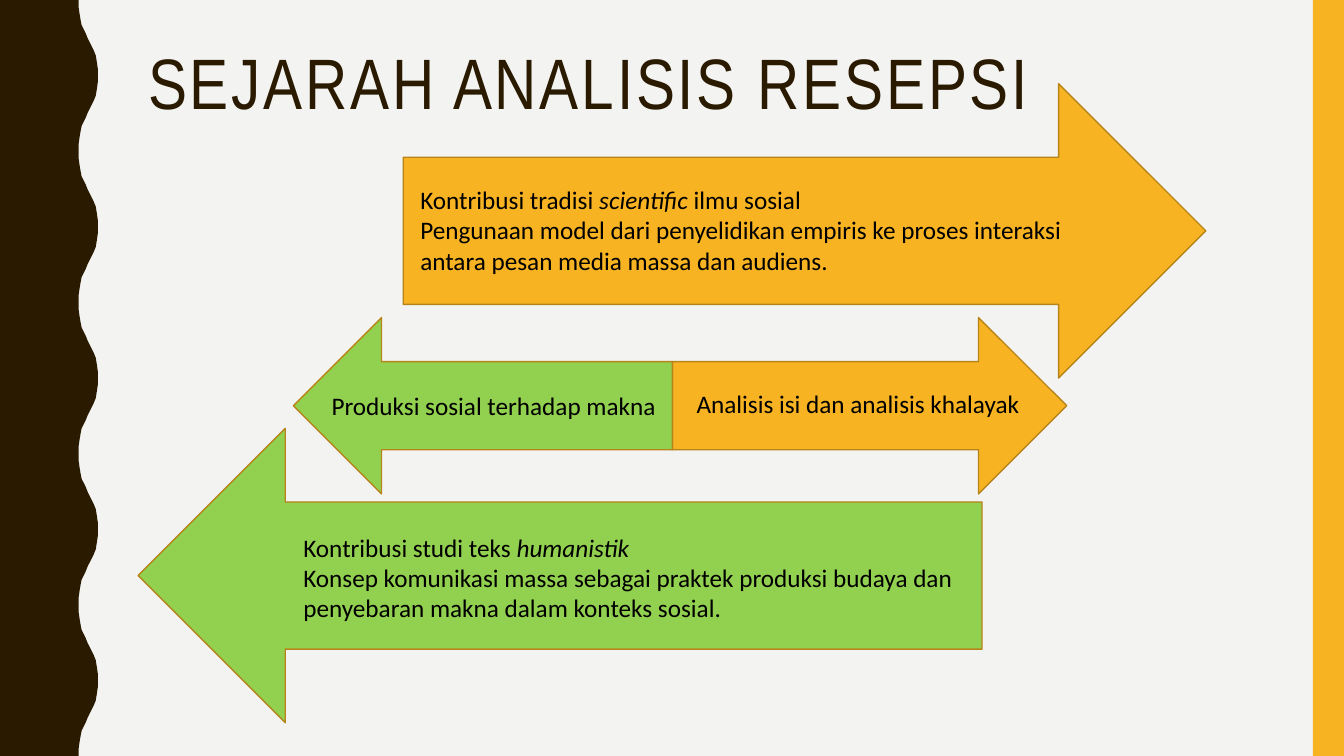
from pptx import Presentation
from pptx.dml.color import RGBColor
from pptx.enum.shapes import MSO_SHAPE as SHAPE
from pptx.enum.text import MSO_ANCHOR as ANCHOR, MSO_AUTO_SIZE as AUTO, PP_ALIGN as ALIGN
from pptx.util import Pt

PX = 9144
BROWN = RGBColor(0x2A, 0x1A, 0x00)
AMBER = RGBColor(0xF8, 0xB3, 0x23)
GREEN = RGBColor(0x92, 0xD0, 0x50)
EDGE = RGBColor(0xB7, 0x84, 0x1A)
PALE = RGBColor(0xF3, 0xF3, 0xF2)
BLACK = RGBColor(0, 0, 0)


def paint(sp, fill, line=None):
    sp.shadow.inherit = False
    sp.fill.solid()
    sp.fill.fore_color.rgb = fill
    if line is None:
        sp.line.fill.background()
    else:
        sp.line.color.rgb = line
        sp.line.width = Pt(1)


def add_run(p, text, color, **font):
    r = p.add_run()
    r.text = text
    r.font.color.rgb = color
    for name, value in font.items():
        setattr(r.font, name, value)
    return r


prs = Presentation()
prs.slide_width, prs.slide_height = 1333 * PX, 750 * PX
s = prs.slides.add_slide(prs.slide_layouts[5])
s.background.fill.solid()
s.background.fill.fore_color.rgb = PALE

title = s.shapes.title
title.left, title.top, title.width, title.height = [v * PX for v in (137, 42, 1113, 163)]
tf = title.text_frame
for name, value in {"word_wrap": True, "auto_size": AUTO.NONE, "vertical_anchor": ANCHOR.TOP}.items():
    setattr(tf, name, value)
p = tf.paragraphs[0]
p.alignment = ALIGN.LEFT
p.line_spacing = 0.9
r = add_run(p, "SEJARAH ANALISIS RESEPSI", BROWN, name="Arial Narrow", size=Pt(51))
r.font._element.set("spc", "200")

rise = [(78, 0), (78, 7), (79, 14), (80, 20), (81, 25), (83, 29), (85, 33), (87, 38),
        (89, 42), (91, 46), (93, 50), (95, 55), (96, 61), (97, 68), (97, 75)]
wave = rise + [(x, 150 - y) for x, y in reversed(rise[:-1])]
edge = [(x, y + 150 * i) for i in range(5) for x, y in wave]
builder = s.shapes.build_freeform(0, 0, scale=PX)
builder.add_line_segments(edge + [(0, 750)], close=True)
paint(builder.convert_to_shape(), BROWN)

bar = s.shapes.add_shape(SHAPE.RECTANGLE, 1302 * PX, 0, 31 * PX, 750 * PX)
paint(bar, AMBER)

arrows = [
    (SHAPE.RIGHT_ARROW, AMBER, (400, 83, 796, 292)),
    (SHAPE.LEFT_ARROW, GREEN, (137, 425, 837, 292)),
    (SHAPE.RIGHT_ARROW, AMBER, (667, 315, 391, 175)),
    (SHAPE.LEFT_ARROW, GREEN, (291, 315, 376, 175)),
]
for kind, fill, box in arrows:
    paint(s.shapes.add_shape(kind, *[v * PX for v in box]), fill, EDGE)

captions = [
    ((407, 178, 691, 101), [
        [("Kontribusi tradisi ", False), ("scientific ", True), ("ilmu sosial", False)],
        [("Pengunaan model dari penyelidikan empiris ke proses interaksi "
          "antara pesan media massa dan audiens.", False)]]),
    ((291, 523, 682, 101), [
        [("Kontribusi studi teks ", False), ("humanistik", True)],
        [("Konsep komunikasi massa sebagai praktek produksi budaya dan "
          "penyebaran makna dalam konteks sosial.", False)]]),
    ((681, 380, 362, 40), [[("Analisis isi dan analisis khalayak", False)]]),
    ((319, 382, 362, 40), [[("Produksi sosial terhadap makna", False)]]),
]
for box, paragraphs in captions:
    tf = s.shapes.add_textbox(*[v * PX for v in box]).text_frame
    tf.word_wrap = True
    tf.auto_size = AUTO.SHAPE_TO_FIT_TEXT
    for i, runs in enumerate(paragraphs):
        p = tf.add_paragraph() if i else tf.paragraphs[0]
        for text, italic in runs:
            add_run(p, text, BLACK, name="Calibri", size=Pt(18), italic=italic)

prs.save("out.pptx")
